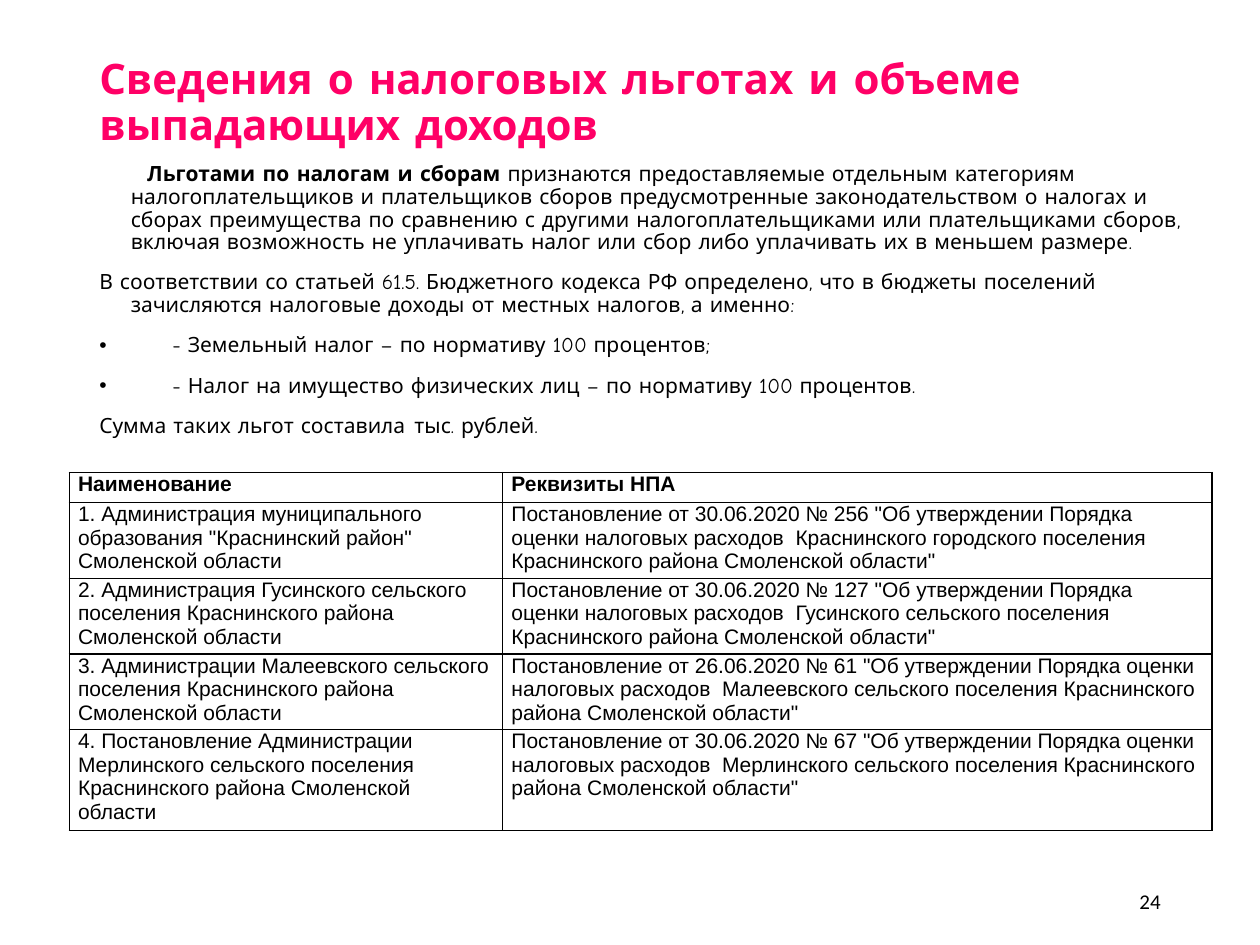
from lxml import etree
from pptx import Presentation
from pptx import util as u
from pptx.dml.color import RGBColor
from pptx.enum import text
from pptx.oxml.ns import qn

THEME = {
    "accent": RGBColor.from_string("FF0066"),
    "ink": RGBColor.from_string("000000"),
    "display": "Comic Neue",
    "grid": "Arial",
    "number": "Calibri",
    "title_size": 24,
    "text_size": 12,
}

TITLE = "Сведения о налоговых льготах и объеме выпадающих доходов"
BODY = [
    {"lead": "Льготами по налогам и сборам",
     "text": " признаются предоставляемые отдельным категориям налогоплательщиков и "
             "плательщиков сборов предусмотренные законодательством о налогах и сборах "
             "преимущества по сравнению с другими налогоплательщиками или плательщиками "
             "сборов, включая возможность не уплачивать налог или сбор либо уплачивать "
             "их в меньшем размере.",
     "margin": 0.25, "indent": 0.13},
    {"text": "В соответствии со статьей 61.5. Бюджетного кодекса РФ определено, что в "
             "бюджеты поселений зачисляются налоговые доходы от местных налогов, а именно:",
     "margin": 0.25, "indent": -0.25},
    {"text": "- Земельный налог – по нормативу 100 процентов;",
     "margin": 0.58, "indent": -0.58, "bullet": "•"},
    {"text": "- Налог на имущество физических лиц – по нормативу 100 процентов.",
     "margin": 0.58, "indent": -0.58, "bullet": "•"},
    {"text": "Сумма таких льгот составила\tтыс. рублей.",
     "margin": 0, "indent": 0, "tab": 2.6},
]
PAGE = "24"

HEADER = ("Наименование", "Реквизиты НПА")
ACTS = [
    ("1. Администрация муниципального образования \"Краснинский район\" Смоленской области",
     "30.06.2020 № 256", "Краснинского городского"),
    ("2. Администрация Гусинского сельского поселения Краснинского района Смоленской области",
     "30.06.2020 № 127", "Гусинского сельского"),
    ("3. Администрации Малеевского сельского поселения Краснинского района Смоленской области",
     "26.06.2020 № 61", "Малеевского сельского"),
    ("4. Постановление Администрации Мерлинского сельского поселения Краснинского района "
     "Смоленской области",
     "30.06.2020 № 67", "Мерлинского сельского"),
]
COLUMN_WIDTHS = (3.44, 5.63)
ROW_HEIGHTS = (0.24, 0.6, 0.6, 0.6, 0.8)


def act_title(date_number, settlement):
    return (f"Постановление от {date_number} \"Об утверждении Порядка оценки налоговых "
            f"расходов  {settlement} поселения Краснинского района Смоленской области\"")


def style(paragraph, face, size, color, bold=None):
    font = paragraph.font
    font.name, font.size, font.bold = face, u.Pt(size), bold
    font.color.rgb = color


def add_box(slide, left, top, width, height, anchor):
    frame = slide.shapes.add_textbox(*map(u.Inches, (left, top, width, height))).text_frame
    frame.word_wrap = True
    frame.vertical_anchor = anchor
    return frame


def lay_out(paragraph, item):
    props = paragraph._p.get_or_add_pPr()
    props.set("marL", str(u.Inches(item["margin"])))
    props.set("indent", str(u.Inches(item["indent"])))
    if "bullet" in item:
        etree.SubElement(props, qn("a:buFont"), typeface=THEME["grid"])
        etree.SubElement(props, qn("a:buChar"), char=item["bullet"])
    else:
        etree.SubElement(props, qn("a:buNone"))
    if "tab" in item:
        tabs = etree.SubElement(props, qn("a:tabLst"))
        etree.SubElement(tabs, qn("a:tab"), pos=str(u.Inches(item["tab"])), algn="l")


def add_body(slide):
    frame = add_box(slide, 0.69, 1.25, 8.92, 5.16, text.MSO_ANCHOR.TOP)
    for index, item in enumerate(BODY):
        paragraph = frame.add_paragraph() if index else frame.paragraphs[0]
        lay_out(paragraph, item)
        paragraph.line_spacing = 0.9
        if index:
            paragraph.space_before = u.Pt(10)
        style(paragraph, THEME["display"], THEME["text_size"], THEME["ink"])
        if "lead" in item:
            lead = paragraph.add_run()
            lead.text = item["lead"]
            lead.font.bold = True
        paragraph.add_run().text = item["text"]


def outline(cell):
    props = cell._tc.get_or_add_tcPr()
    for position, side in enumerate(("a:lnL", "a:lnR", "a:lnT", "a:lnB")):
        line = etree.Element(qn(side), w=str(u.Pt(1)))
        fill = etree.SubElement(line, qn("a:solidFill"))
        etree.SubElement(fill, qn("a:srgbClr"), val=str(THEME["ink"]))
        props.insert(position, line)


def add_acts(slide):
    rows = [HEADER] + [(name, act_title(*act)) for name, *act in ACTS]
    table = slide.shapes.add_table(
        len(rows), len(HEADER), u.Inches(0.55), u.Inches(3.75),
        u.Inches(sum(COLUMN_WIDTHS)), u.Inches(sum(ROW_HEIGHTS))).table
    table.first_row = table.horz_banding = False
    for column, width in zip(table.columns, COLUMN_WIDTHS):
        column.width = u.Inches(width)
    for r, (row, height) in enumerate(zip(rows, ROW_HEIGHTS)):
        table.rows[r].height = u.Inches(height)
        for c, words in enumerate(row):
            cell = table.cell(r, c)
            cell.margin_left = cell.margin_right = u.Inches(0.07)
            cell.margin_top = cell.margin_bottom = 0
            cell.text = words
            style(cell.text_frame.paragraphs[0], THEME["grid"], THEME["text_size"],
                  THEME["ink"], bold=r == 0)
            cell.fill.background()
            outline(cell)


def main():
    deck = Presentation()
    deck.slide_width, deck.slide_height = u.Inches(10), u.Inches(7.5)
    slide = deck.slides.add_slide(deck.slide_layouts[6])

    title = add_box(slide, 0.69, 0.4, 8.62, 0.85, text.MSO_ANCHOR.MIDDLE).paragraphs[0]
    title.text = TITLE
    title.line_spacing = 0.9
    style(title, THEME["display"], THEME["title_size"], THEME["accent"], bold=True)

    add_body(slide)

    page = add_box(slide, 7.06, 6.95, 2.25, 0.4, text.MSO_ANCHOR.MIDDLE).paragraphs[0]
    page.text = PAGE
    page.alignment = text.PP_ALIGN.RIGHT
    style(page, THEME["number"], THEME["text_size"], THEME["ink"])

    add_acts(slide)
    deck.save("out.pptx")


if __name__ == "__main__":
    main()
